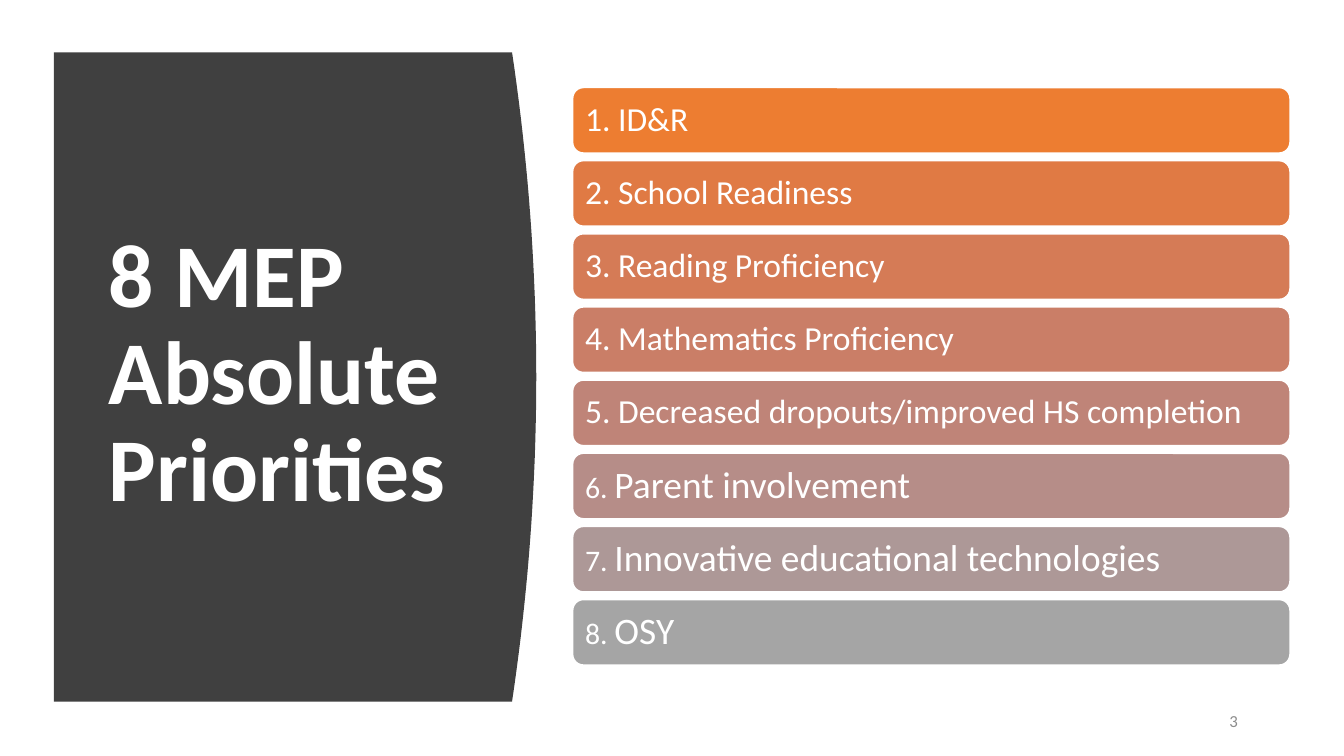
from dataclasses import dataclass

from pptx import Presentation
from pptx.dml.color import RGBColor
from pptx.enum.shapes import MSO_SHAPE
from pptx.enum.text import MSO_ANCHOR, MSO_AUTO_SIZE, PP_ALIGN
from pptx.util import Inches, Pt


@dataclass(frozen=True)
class Theme:
    font: str = "Calibri"
    white: str = "FFFFFF"
    panel: str = "404040"
    muted: str = "8C8C8C"
    bars: tuple = ("ED7D31", "E07A44", "D57B56", "CA7E67",
                   "BF8478", "B68D88", "AD9897", "A5A5A5")
    title_size: int = 48
    item_size: int = 18
    small_size: int = 16
    large_size: int = 20
    number_size: int = 9


def write_text(shape, spans, color, font, bold=False, align=PP_ALIGN.LEFT,
               spacing=1.0, inset=0.1):
    """Fill a shape with one paragraph; spans are (text, size) pairs."""
    frame = shape.text_frame
    frame.word_wrap = True
    frame.auto_size = MSO_AUTO_SIZE.NONE
    frame.vertical_anchor = MSO_ANCHOR.MIDDLE
    frame.margin_left = frame.margin_right = Inches(inset)
    frame.margin_top = frame.margin_bottom = Inches(0.05)
    para = frame.paragraphs[0]
    para.alignment = align
    para.line_spacing = spacing
    for text, size in spans:
        span = para.add_run()
        span.text = text
        span.font.name = font
        span.font.size = Pt(size)
        span.font.bold = bold
        span.font.color.rgb = RGBColor.from_string(color)


class SlideBuilder:
    def __init__(self, page, theme):
        self.page = page
        self.theme = theme

    def paint(self, shape, fill, line=None):
        shape.shadow.inherit = False
        shape.fill.solid()
        shape.fill.fore_color.rgb = RGBColor.from_string(fill)
        if line:
            shape.line.color.rgb = RGBColor.from_string(line)
            shape.line.width = Pt(1)
        else:
            shape.line.fill.background()

    def curved_panel(self, left, top, edge, bottom, bulge, steps=40):
        """Panel whose right side bows outward along a parabola."""
        curve = []
        for step in range(steps + 1):
            offset = 2 * step / steps - 1
            x = edge + bulge * (1 - offset ** 2)
            y = top + (bottom - top) * step / steps
            curve.append((Inches(x), Inches(y)))
        outline = self.page.shapes.build_freeform(Inches(left), Inches(top))
        outline.add_line_segments(curve + [(Inches(left), Inches(bottom))], close=True)
        panel = outline.convert_to_shape()
        self.paint(panel, self.theme.panel)
        return panel

    def title(self, text, left, top, width, height, above):
        title = self.page.shapes.title
        title.left, title.top = Inches(left), Inches(top)
        title.width, title.height = Inches(width), Inches(height)
        write_text(title, [(text, self.theme.title_size)], self.theme.white,
                   self.theme.font, bold=True, spacing=0.9)
        above.element.addnext(title.element)

    def bar(self, spans, fill, left, top, width, height):
        bar = self.page.shapes.add_shape(
            MSO_SHAPE.ROUNDED_RECTANGLE,
            Inches(left), Inches(top), Inches(width), Inches(height))
        self.paint(bar, fill, self.theme.white)
        write_text(bar, spans, self.theme.white, self.theme.font,
                   spacing=0.9, inset=0.07)

    def page_number(self, text, left, top, width, height):
        box = self.page.shapes.add_textbox(
            Inches(left), Inches(top), Inches(width), Inches(height))
        write_text(box, [(text, self.theme.number_size)], self.theme.muted,
                   self.theme.font, align=PP_ALIGN.RIGHT)


def main():
    # Widescreen 16:9
    deck = Presentation()
    deck.slide_width, deck.slide_height = Inches(10), Inches(10 * 9 / 16)
    theme = Theme()
    builder = SlideBuilder(deck.slides.add_slide(deck.slide_layouts[5]), theme)

    # Dark panel with the title
    panel = builder.curved_panel(0.4, 0.39, 3.81, 5.22, bulge=0.18)
    builder.title("8 MEP Absolute Priorities", 0.71, 0.83, 2.8, 3.93, above=panel)

    # Slide number
    builder.page_number("3", 8.8, 5.21, 0.51, 0.3)

    # Priority bars, evenly spaced; the last three have a smaller number
    priorities = ["ID&R", "School Readiness", "Reading Proficiency",
                  "Mathematics Proficiency",
                  "Decreased dropouts/improved HS completion",
                  "Parent involvement", "Innovative educational technologies",
                  "OSY"]
    first_top, last_top = 0.65, 4.46
    pitch = (last_top - first_top) / (len(priorities) - 1)
    for index, (priority, fill) in enumerate(zip(priorities, theme.bars)):
        number = f"{index + 1}. "
        if index < 5:
            spans = [(number + priority, theme.item_size)]
        else:
            spans = [(number, theme.small_size), (priority, theme.large_size)]
        builder.bar(spans, fill, 4.26, first_top + index * pitch, 5.34, 0.49)

    deck.save("out.pptx")


if __name__ == "__main__":
    main()
